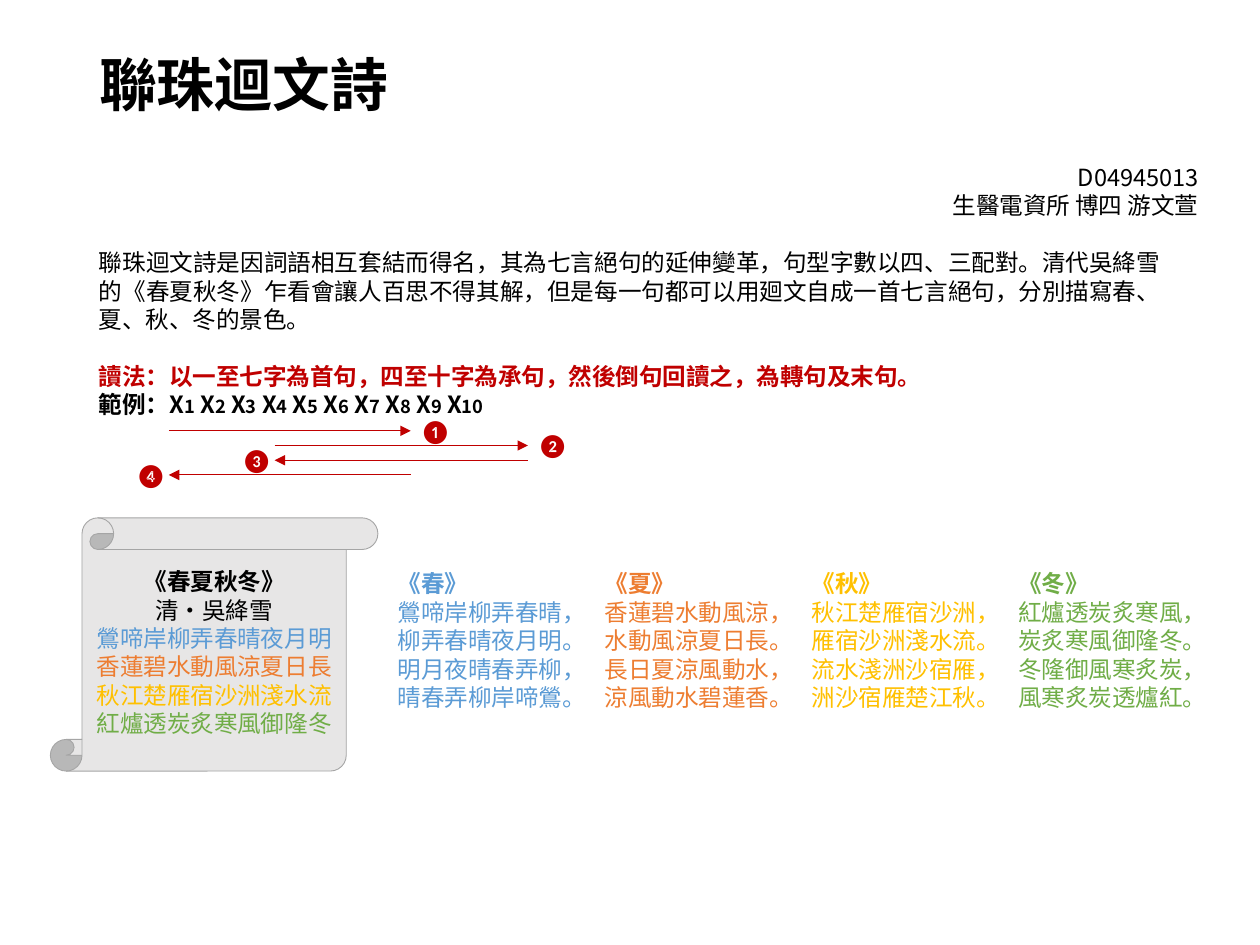
from lxml.etree import SubElement
from pptx import Presentation
from pptx.dml.color import RGBColor
from pptx.enum.shapes import MSO_CONNECTOR, MSO_SHAPE
from pptx.enum.text import MSO_ANCHOR, MSO_AUTO_SIZE, PP_ALIGN
from pptx.oxml.ns import qn
from pptx.util import Pt

FONT, RED = "Noto Sans CJK SC", "C00000"
SIZE, LINE_HEIGHT = 13.5, 16.2
TITLE = "聯珠迴文詩"
AUTHOR = ["D04945013", "生醫電資所 博四 游文萱"]
INTRO = ("聯珠迴文詩是因詞語相互套結而得名，其為七言絕句的延伸變革，句型字數以四、三配對。"
         "清代吳絳雪的《春夏秋冬》乍看會讓人百思不得其解，但是每一句都可以用廻文自成一首七言絕句，"
         "分別描寫春、夏、秋、冬的景色。")
READING = "讀法：以一至七字為首句，四至十字為承句，然後倒句回讀之，為轉句及末句。"
EXAMPLE = "範例："
POEM_TITLE, POET = "《春夏秋冬》", "清•吳絳雪"
SEASONS = [
    ("《春》", "鶯啼岸柳弄春晴夜月明", "5B9BD5"),
    ("《夏》", "香蓮碧水動風涼夏日長", "ED7D31"),
    ("《秋》", "秋江楚雁宿沙洲淺水流", "FFC000"),
    ("《冬》", "紅爐透炭炙寒風御隆冬", "70AD47"),
]
ARROWS = [("❶", 96.5, 234.7), ("❷", 157, 301.7), ("❸", 301.7, 157), ("❹", 234.7, 96.5)]


def rgb(value):
    """Turn a hex string into a colour."""
    return RGBColor.from_string(value)


def add_run(paragraph, text, size=SIZE, color="000000", bold=False, font=FONT):
    """Append one formatted run to a paragraph."""
    run = paragraph.add_run()
    run.text = text
    run.font.size, run.font.bold, run.font.name = Pt(size), bold, font
    run.font.color.rgb = rgb(color)
    SubElement(run._r.get_or_add_rPr(), qn("a:ea")).set("typeface", font)


def write(frame, text, first=False, align=PP_ALIGN.LEFT, spacing=Pt(LINE_HEIGHT), before=0, **style):
    """Write one paragraph into a text frame and return it."""
    paragraph = frame.paragraphs[0] if first else frame.add_paragraph()
    paragraph.alignment, paragraph.line_spacing = align, spacing
    paragraph.space_before = Pt(before)
    add_run(paragraph, text, **style)
    return paragraph


def add_box(slide, left, top, width, height, anchor=MSO_ANCHOR.TOP):
    """Add a wrapping text box and return its text frame."""
    frame = slide.shapes.add_textbox(Pt(left), Pt(top), Pt(width), Pt(height)).text_frame
    frame.word_wrap, frame.vertical_anchor = True, anchor
    return frame


def add_arrow(slide, start, end, y):
    """Add a thin horizontal arrow."""
    arrow = slide.shapes.add_connector(MSO_CONNECTOR.STRAIGHT, Pt(start), Pt(y), Pt(end), Pt(y))
    arrow.line.color.rgb, arrow.line.width = rgb(RED), Pt(0.5)
    SubElement(arrow.line._get_or_add_ln(), qn("a:tailEnd")).set("type", "triangle")
    SubElement(arrow._element.spPr, qn("a:effectLst"))


def add_title(slide):
    """Place and format the title placeholder."""
    title = slide.shapes.title
    title.left, title.top, title.width, title.height = Pt(49.5), Pt(28.8), Pt(621), Pt(104.4)
    frame = title.text_frame
    frame.vertical_anchor, frame.auto_size = MSO_ANCHOR.TOP, MSO_AUTO_SIZE.NONE
    write(frame, TITLE, first=True, spacing=0.9, size=33, bold=True)


def add_explanation(slide):
    """Add the author, the introduction and the reading rule."""
    author = add_box(slide, 534.2, 89.3, 157.7, 40.3)
    for index, line in enumerate(AUTHOR):
        write(author, line, first=index == 0, align=PP_ALIGN.RIGHT)
    body = add_box(slide, 49.5, 138.2, 621, 121.7)
    write(body, INTRO, first=True, align=PP_ALIGN.JUSTIFY)
    write(body, READING, align=PP_ALIGN.JUSTIFY, before=LINE_HEIGHT, color=RED, bold=True)
    example = write(body, EXAMPLE, align=PP_ALIGN.JUSTIFY, bold=True)
    for number in range(1, 11):
        add_run(example, "X" if number == 1 else " X", bold=True)
        add_run(example, str(number), size=10.5, bold=True)


def add_reading_order(slide):
    """Add the four arrows, each with its number beyond the tip."""
    for index, (mark, start, end) in enumerate(ARROWS):
        y = 246.2 + 8.4 * index
        add_arrow(slide, start, end, y)
        center = end + (12.2 if end > start else -12.2)
        frame = add_box(slide, center - 14, y - 12, 28, 24, MSO_ANCHOR.MIDDLE)
        write(frame, mark, first=True, align=PP_ALIGN.CENTER, spacing=1.0, color=RED, font="Calibri")


def add_scroll(slide):
    """Add the scroll with the whole poem."""
    scroll = slide.shapes.add_shape(MSO_SHAPE.VERTICAL_SCROLL, Pt(28.8), Pt(295.9), Pt(187.2), Pt(144.7))
    scroll.shadow.inherit = False
    scroll.fill.solid()
    scroll.fill.fore_color.rgb = rgb("E7E6E6")
    scroll.line.color.rgb, scroll.line.width = rgb("A5A5A5"), Pt(0.5)
    frame = scroll.text_frame
    frame.word_wrap, frame.vertical_anchor = True, MSO_ANCHOR.TOP
    frame.margin_left = frame.margin_right = Pt(5)
    frame.margin_top = Pt(10)
    write(frame, POEM_TITLE, first=True, align=PP_ALIGN.CENTER, bold=True)
    write(frame, POET, align=PP_ALIGN.CENTER)
    for _, verse, color in SEASONS:
        write(frame, verse, align=PP_ALIGN.CENTER, color=color)


def add_seasons(slide):
    """Unfold each ten-character verse into its four lines."""
    for index, (name, verse, color) in enumerate(SEASONS):
        frame = add_box(slide, 220.3 + 118.2 * index, 321.8, 123.8, 89.3)
        write(frame, name, first=True, color=color, bold=True)
        opening, following = verse[:7], verse[3:]
        lines = [opening, following, following[::-1], opening[::-1]]
        for line, stop in zip(lines, "，。，。"):
            write(frame, line + stop, color=color)


def main():
    """Build the slide and save it."""
    presentation = Presentation()
    presentation.slide_width, presentation.slide_height = Pt(720), Pt(540)
    slide = presentation.slides.add_slide(presentation.slide_layouts[5])
    add_title(slide)
    add_seasons(slide)
    add_explanation(slide)
    add_reading_order(slide)
    add_scroll(slide)
    presentation.save("out.pptx")


if __name__ == "__main__":
    main()
